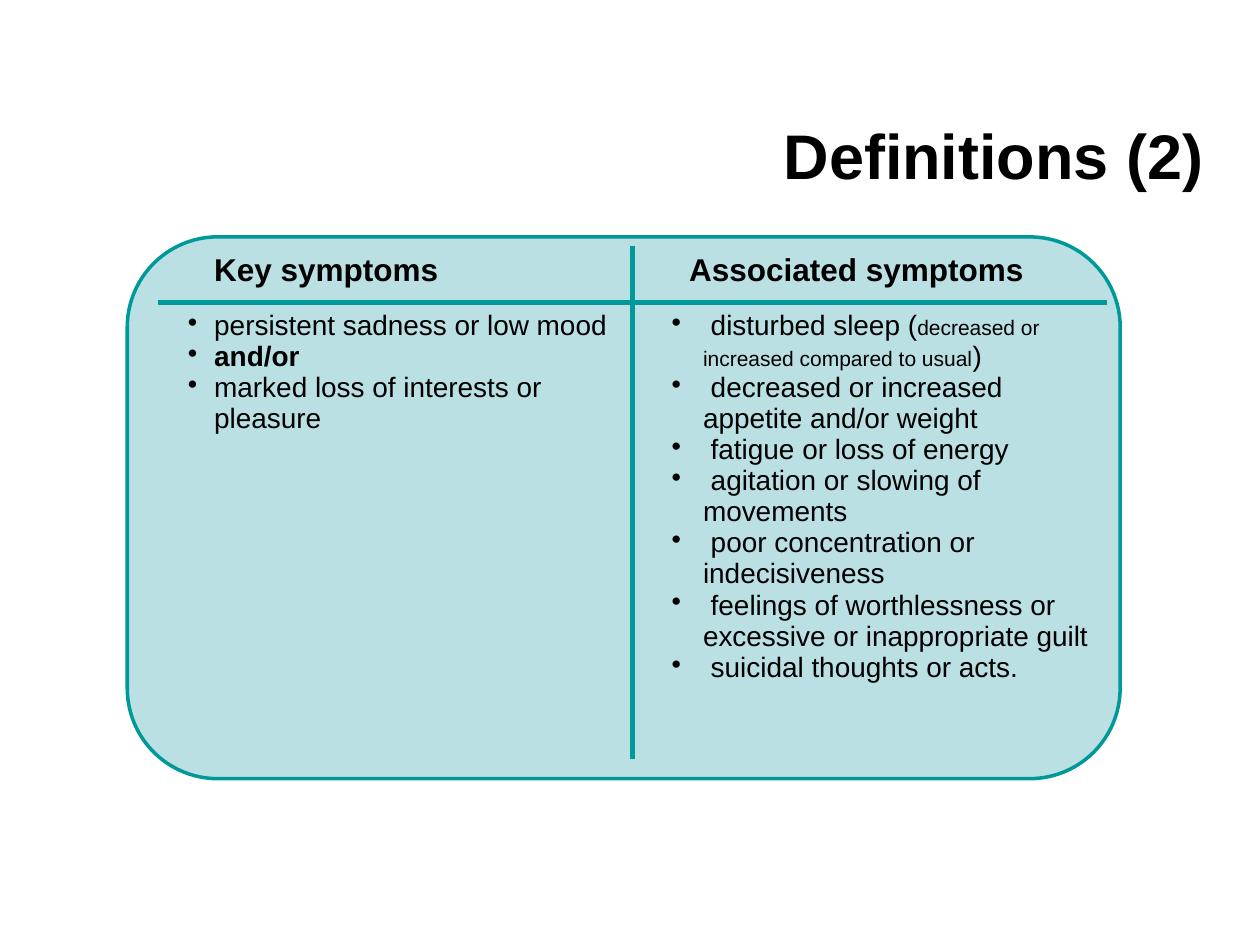
import pptx
import pptx.util
import pptx.dml.color
import pptx.enum.shapes
import pptx.enum.text
import pptx.oxml
import pptx.oxml.ns
import lxml.etree

theme = {
    "font": "Arial",
    "ink": pptx.dml.color.RGBColor.from_string("000000"),
    "panel": pptx.dml.color.RGBColor.from_string("BBE0E3"),
    "rule": pptx.dml.color.RGBColor.from_string("009999"),
    "title": pptx.util.Pt(36),
    "heading": pptx.util.Pt(18),
    "body": pptx.util.Pt(16),
    "detail": pptx.util.Pt(12),
    "outline": pptx.util.Pt(2),
    "divider": pptx.util.Pt(3),
}

deck = pptx.Presentation()
deck.slide_width = pptx.util.Inches(10)
deck.slide_height = pptx.util.Inches(7.5)
slide = deck.slides.add_slide(deck.slide_layouts[6])


def across(percent):
    return round(deck.slide_width * percent / 100)


def down(percent):
    return round(deck.slide_height * percent / 100)


panel = slide.shapes.add_shape(
    pptx.enum.shapes.MSO_SHAPE.ROUNDED_RECTANGLE,
    across(28), down(1.2), across(43), down(105.07))
panel.rotation = 90
panel.adjustments[0] = 0.167
panel.shadow.inherit = False
panel.fill.solid()
panel.fill.fore_color.rgb = theme["panel"]
panel.line.color.rgb = theme["rule"]
panel.line.width = theme["outline"]

key_symptoms = [
    [("persistent sadness or low mood", "body")],
    [("and/or", "body")],
    [("marked loss of interests or pleasure", "body")],
]
associated_symptoms = [
    [(" disturbed sleep (", "body"),
     ("decreased or increased compared to usual", "detail"),
     (")", "body")],
    [(" decreased or increased appetite and/or weight", "body")],
    [(" fatigue or loss of energy", "body")],
    [(" agitation or slowing of movements", "body")],
    [(" poor concentration or indecisiveness", "body")],
    [(" feelings of worthlessness or excessive or inappropriate guilt", "body")],
    [(" suicidal thoughts or acts.", "body")],
]
symptom_rows = [
    [[[("Key symptoms", "heading")]], [[("Associated symptoms", "heading")]]],
    [key_symptoms, associated_symptoms],
]
hanging = [(3.9, -2.1, 0), (5, -2.5, 1)]
inner_edges = [[("lnR", "lnB"), ("lnL", "lnB")], [("lnR", "lnT"), ("lnL", "lnT")]]

symptoms = slide.shapes.add_table(
    2, 2, across(12.5), down(26), across(75.4), down(54.27)).table
symptoms.first_row = False
symptoms.horz_banding = False
for column in symptoms.columns:
    column.width = across(37.7)
symptoms.rows[0].height = down(6)
symptoms.rows[1].height = down(48.27)

for row, contents in enumerate(symptom_rows):
    for col, items in enumerate(contents):
        cell = symptoms.cell(row, col)
        cell.margin_left, cell.margin_right = across(0.6), across(1)
        cell.margin_top = cell.margin_bottom = down(0.8)
        properties = cell._tc.get_or_add_tcPr()
        for edge in ("lnL", "lnR", "lnT", "lnB"):
            border = lxml.etree.SubElement(properties, pptx.oxml.ns.qn("a:" + edge))
            if edge in inner_edges[row][col]:
                border.set("w", str(theme["divider"]))
                paint = lxml.etree.SubElement(border, pptx.oxml.ns.qn("a:solidFill"))
                tint = lxml.etree.SubElement(paint, pptx.oxml.ns.qn("a:srgbClr"))
                tint.set("val", str(theme["rule"]))
            else:
                lxml.etree.SubElement(border, pptx.oxml.ns.qn("a:noFill"))
        cell.fill.background()

        for number, pieces in enumerate(items):
            line = cell.text_frame.paragraphs[0] if number == 0 else cell.text_frame.add_paragraph()
            layout = line._p.get_or_add_pPr()
            margin, indent, level = hanging[col] if row else (3.9, 0, 0)
            line.level = level
            layout.set("marL", str(across(margin)))
            layout.set("indent", str(across(indent)))
            if row:
                bullet = lxml.etree.SubElement(layout, pptx.oxml.ns.qn("a:buChar"))
                bullet.set("char", "•")
            line.font.name = theme["font"]
            line.font.color.rgb = theme["ink"]
            line.font.bold = row == 0 or pieces[0][0] == "and/or"
            for words, size in pieces:
                run = line.add_run()
                run.text = words
                run.font.size = theme[size]

title = slide.shapes.add_textbox(across(17.7), down(6.93), across(78.8), down(18.8)).text_frame
title.word_wrap = True
title.vertical_anchor = pptx.enum.text.MSO_ANCHOR.MIDDLE
heading = title.paragraphs[0]
heading.text = "Definitions (2)"
heading.alignment = pptx.enum.text.PP_ALIGN.RIGHT
heading.font.name = theme["font"]
heading.font.size = theme["title"]
heading.font.bold = True
heading.font.color.rgb = theme["ink"]

deck.save("out.pptx")
